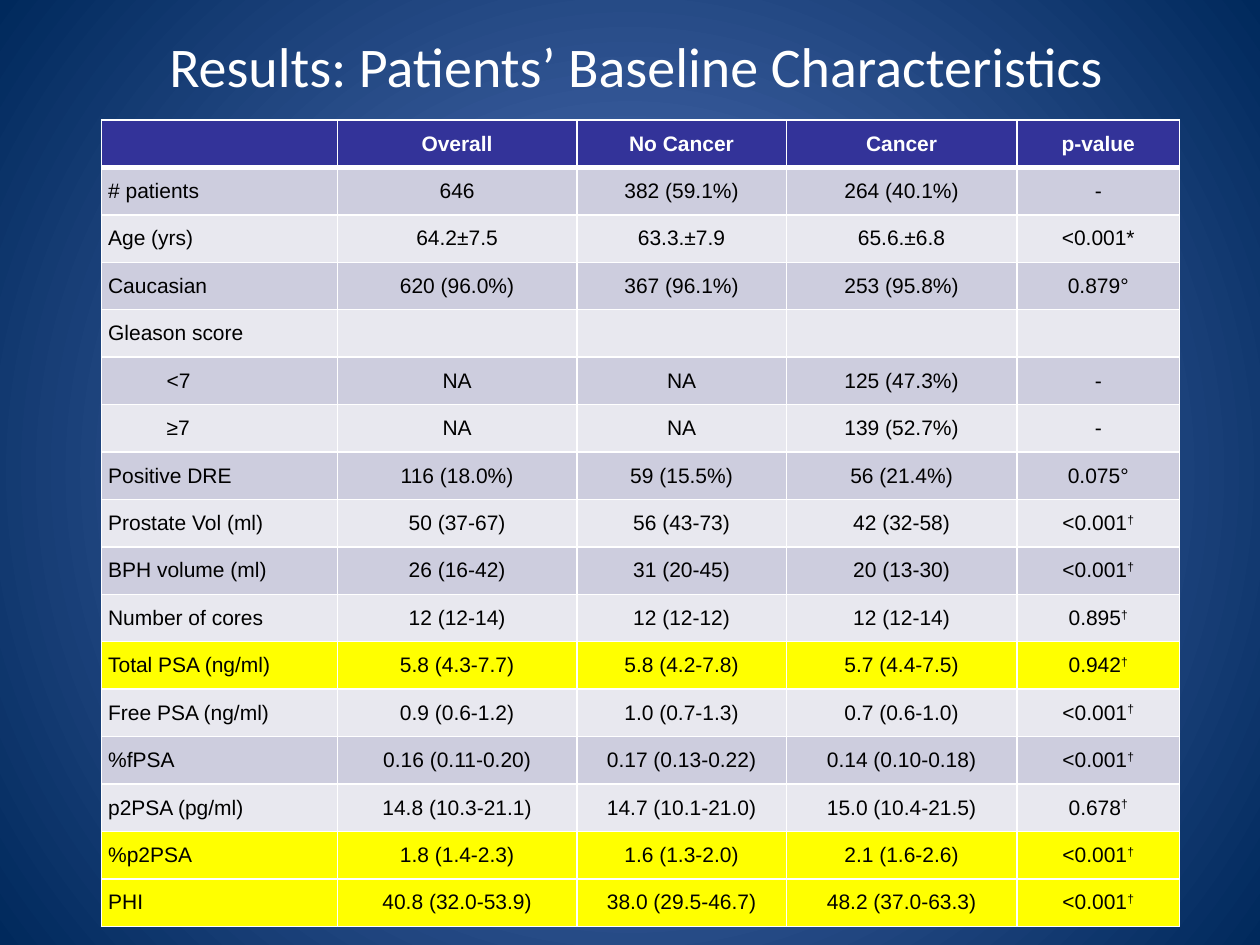
from lxml.etree import SubElement
from pptx import Presentation
from pptx.dml.color import RGBColor
from pptx.enum.text import MSO_ANCHOR, PP_ALIGN
from pptx.oxml.ns import qn
from pptx.util import Cm, Pt

HEADERS = ["", "Overall", "No Cancer", "Cancer", "p-value"]
PATIENT_ROWS = [
    ["# patients", "646", "382 (59.1%)", "264 (40.1%)", "-"],
    ["Age (yrs)", "64.2±7.5", "63.3.±7.9", "65.6.±6.8", "<0.001*"],
    ["Caucasian", "620 (96.0%)", "367 (96.1%)", "253 (95.8%)", "0.879°"],
    ["Gleason score", "", "", "", ""],
    ["<7", "NA", "NA", "125 (47.3%)", "-"],
    ["≥7", "NA", "NA", "139 (52.7%)", "-"],
    ["Positive DRE", "116 (18.0%)", "59 (15.5%)", "56 (21.4%)", "0.075°"],
    ["Prostate Vol (ml)", "50 (37-67)", "56 (43-73)", "42 (32-58)", "<0.001†"],
    ["BPH volume (ml)", "26 (16-42)", "31 (20-45)", "20 (13-30)", "<0.001†"],
    ["Number of cores", "12 (12-14)", "12 (12-12)", "12 (12-14)", "0.895†"],
    ["Total PSA (ng/ml)", "5.8 (4.3-7.7)", "5.8 (4.2-7.8)", "5.7 (4.4-7.5)", "0.942†"],
    ["Free PSA (ng/ml)", "0.9 (0.6-1.2)", "1.0 (0.7-1.3)", "0.7 (0.6-1.0)", "<0.001†"],
    ["%fPSA", "0.16 (0.11-0.20)", "0.17 (0.13-0.22)", "0.14 (0.10-0.18)", "<0.001†"],
    ["p2PSA (pg/ml)", "14.8 (10.3-21.1)", "14.7 (10.1-21.0)", "15.0 (10.4-21.5)", "0.678†"],
    ["%p2PSA", "1.8 (1.4-2.3)", "1.6 (1.3-2.0)", "2.1 (1.6-2.6)", "<0.001†"],
    ["PHI", "40.8 (32.0-53.9)", "38.0 (29.5-46.7)", "48.2 (37.0-63.3)", "<0.001†"],
]
COLUMN_WIDTHS = [4.75, 4.83, 4.22, 4.65, 3.28]
HIGHLIGHTED = {"Total PSA (ng/ml)", "%p2PSA", "PHI"}
INDENTED = {"<7", "≥7"}


def color(hex_string):
    return RGBColor.from_string(hex_string)


def apply_format(target, values):
    for name, value in values.items():
        setattr(target, name, value)


class SlideBuilder:
    white = "FFFFFF"
    header_fill = "333399"
    band_fills = ["E8E8EF", "CDCDDE"]
    highlight_fill = "FFFF00"
    title_font = {"name": "Calibri", "size": Pt(32), "bold": False}
    body_font = {"name": "Arial", "size": Pt(12), "bold": False}
    header_font = {**body_font, "bold": True}
    cell_format = {
        "margin_left": Cm(0.13), "margin_right": Cm(0.13),
        "margin_top": 0, "margin_bottom": 0,
        "vertical_anchor": MSO_ANCHOR.MIDDLE,
    }

    def __init__(self, presentation):
        self.slide = presentation.slides.add_slide(presentation.slide_layouts[5])

    def background(self, center, edge):
        fill = self.slide.background.fill
        fill.gradient()
        for stop, hex_string, position in zip(fill.gradient_stops, (center, edge), (0, 1)):
            stop.color.rgb = color(hex_string)
            stop.position = position
        linear = next(self.slide.element.iter(qn("a:lin")))
        gradient = linear.getparent()
        gradient.remove(linear)
        circle = SubElement(gradient, qn("a:path"), path="circle")
        SubElement(circle, qn("a:fillToRect"), l="50000", t="50000", r="50000", b="50000")

    def add_run(self, paragraph, text, font, hex_string):
        run = paragraph.add_run()
        run.text = text
        apply_format(run.font, font)
        run.font.color.rgb = color(hex_string)
        return run

    def title(self, text, left, top, width, height):
        shape = self.slide.shapes.title
        apply_format(shape, {"left": Cm(left), "top": Cm(top),
                             "width": Cm(width), "height": Cm(height)})
        apply_format(shape.text_frame, {"vertical_anchor": MSO_ANCHOR.TOP,
                                        "margin_top": Cm(0.2), "word_wrap": True})
        paragraph = shape.text_frame.paragraphs[0]
        paragraph.alignment = PP_ALIGN.CENTER
        self.add_run(paragraph, text, self.title_font, self.white)

    def borders(self, cell, widths):
        properties = cell._tc.get_or_add_tcPr()
        for side, width in widths.items():
            line = SubElement(properties, qn(f"a:ln{side}"), w=str(Pt(width)))
            solid = SubElement(line, qn("a:solidFill"))
            SubElement(solid, qn("a:srgbClr"), val=self.white)

    def cell(self, cell, text, row, column, fill):
        apply_format(cell, self.cell_format)
        self.borders(cell, {"L": 1, "R": 1, "T": 3 if row == 1 else 1, "B": 3 if row == 0 else 1})
        cell.fill.solid()
        cell.fill.fore_color.rgb = color(fill)
        paragraph = cell.text_frame.paragraphs[0]
        paragraph.alignment = PP_ALIGN.CENTER if column else PP_ALIGN.LEFT
        if text in INDENTED:
            paragraph._p.get_or_add_pPr().set("marL", str(Cm(1.18)))
        font, hex_string = (self.body_font, "000000") if row else (self.header_font, self.white)
        value = text.removesuffix("†")
        if value:
            self.add_run(paragraph, value, font, hex_string)
        if value != text:
            dagger = self.add_run(paragraph, "†", font, hex_string)
            dagger._r.get_or_add_rPr().set("baseline", "30000")

    def table(self, rows, left, top, widths, height):
        frame = self.slide.shapes.add_table(
            len(rows), len(widths), Cm(left), Cm(top), Cm(sum(widths)), Cm(height))
        table = frame.table
        for column, width in zip(table.columns, widths):
            column.width = Cm(width)
        for row, texts in enumerate(rows):
            fill = self.band_fills[row % 2] if row else self.header_fill
            if texts[0] in HIGHLIGHTED:
                fill = self.highlight_fill
            for column, text in enumerate(texts):
                self.cell(table.cell(row, column), text, row, column, fill)


def main():
    presentation = Presentation()
    apply_format(presentation, {"slide_width": Cm(25.4), "slide_height": Cm(19.05)})
    builder = SlideBuilder(presentation)
    builder.background("5E7CC5", "00295C")
    builder.title("Results: Patients’ Baseline Characteristics", 1.4, 0.43, 22.86, 3.18)
    builder.table([HEADERS, *PATIENT_ROWS], 2.05, 2.42, COLUMN_WIDTHS, 16.26)
    presentation.save("out.pptx")


if __name__ == "__main__":
    main()
